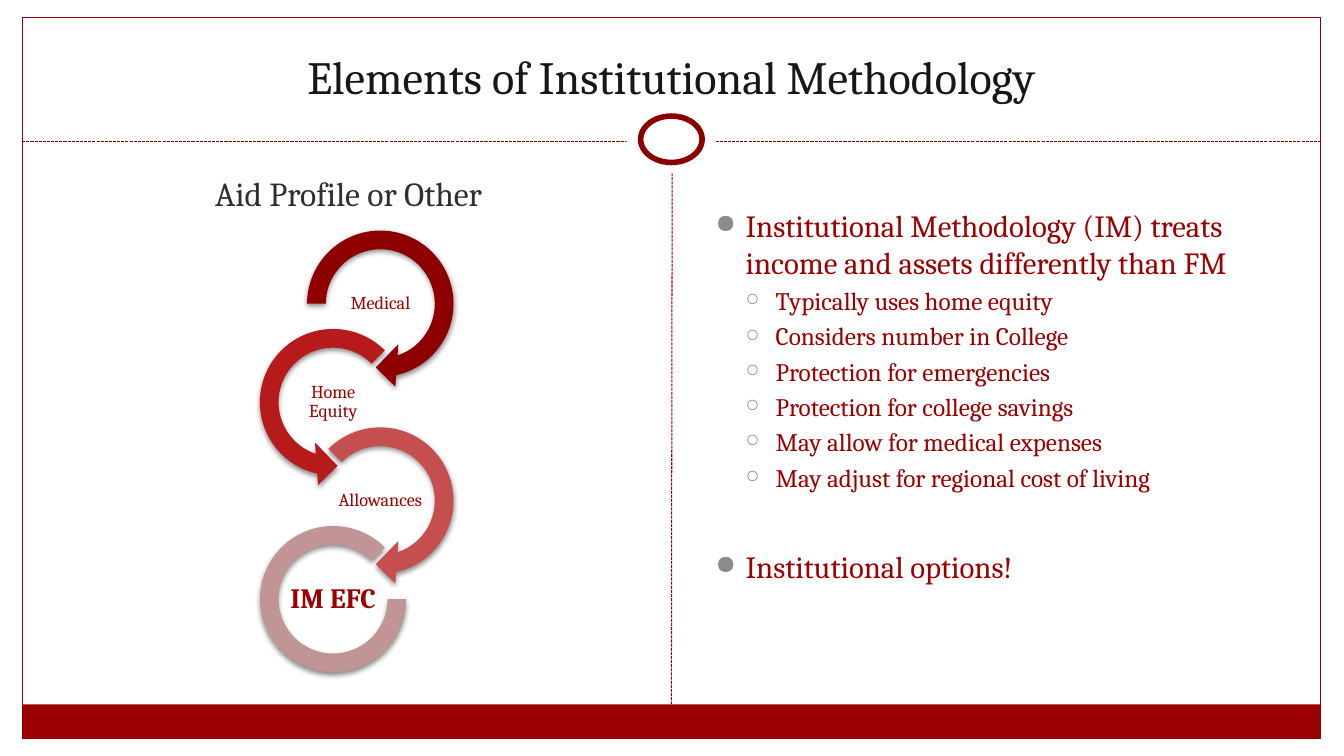
from dataclasses import dataclass

from lxml import etree
from pptx import Presentation
from pptx import util as u
from pptx.dml.color import RGBColor
from pptx.enum import dml, shapes, text
from pptx.oxml import parse_xml
from pptx.oxml.ns import nsdecls, qn


@dataclass(frozen=True)
class Theme:
    font: str = "Cambria"
    white: str = "FFFFFF"
    red: str = "9C0000"
    border: str = "8A0000"
    title: str = "171717"
    heading: str = "2F2F2F"
    bullets: tuple = ("8B8B8B", "8F8F8F")
    loops: tuple = ("8E0000", "B71A1A", "C54E4E", "C19595")
    title_size: int = 33
    heading_size: int = 24
    body_sizes: tuple = (22, 18)
    label_size: int = 13
    result_size: int = 20


THEME = Theme()
SHAPE = shapes.MSO_SHAPE
CENTER = text.PP_ALIGN.CENTER
MIDDLE = text.MSO_ANCHOR.MIDDLE
# Loop label, preset shape and shape adjustments, from top to bottom
LOOPS = [
    ("Medical", SHAPE.CIRCULAR_ARROW, (0.11, 11.42, 45, 108, 0.125)),
    ("Home Equity", SHAPE.LEFT_CIRCULAR_ARROW, (0.11, 11.42, 63, 189, 0.125)),
    ("Allowances", SHAPE.CIRCULAR_ARROW, (0.11, 11.42, 45, 135, 0.125)),
    ("IM EFC", SHAPE.BLOCK_ARC, (0, 189, 0.127)),
]
# Level, wording and space before in points
POINTS = [
    (0, "Institutional Methodology (IM) treats income and assets differently than FM", 0),
    (1, "Typically uses home equity", 3.6),
    (1, "Considers number in College", 3.6),
    (1, "Protection for emergencies", 3.6),
    (1, "Protection for college savings", 3.6),
    (1, "May allow for medical expenses", 3.6),
    (1, "May adjust for regional cost of living", 3.6),
    (0, "Institutional options!", 39.6),
]


def rgb(color):
    return RGBColor.from_string(color)


def cm_box(*lengths):
    return [u.Cm(length) for length in lengths]


def add_outline(parent, preset, box, fill=None, line=None, width=0.75):
    outline = parent.add_shape(preset, *cm_box(*box))
    outline.shadow.inherit = False
    if fill:
        outline.fill.solid()
        outline.fill.fore_color.rgb = rgb(fill)
    else:
        outline.fill.background()
    if line:
        outline.line.color.rgb = rgb(line)
        outline.line.width = u.Pt(width)
    else:
        outline.line.fill.background()
    return outline


def add_dashed(parent, start, end, color):
    rule = parent.add_connector(shapes.MSO_CONNECTOR.STRAIGHT, *cm_box(*start, *end))
    rule.line.color.rgb = rgb(color)
    rule.line.width = u.Pt(0.75)
    rule.line.dash_style = dml.MSO_LINE.SQUARE_DOT
    properties = rule._element.spPr
    etree.SubElement(properties, qn("a:effectLst"))
    return rule


def style_runs(paragraph, size, color, bold=False):
    for run in paragraph.runs:
        run.font.name = THEME.font
        run.font.size = u.Pt(size)
        run.font.bold = bold
        run.font.color.rgb = rgb(color)


def add_caption(parent, box, wording, size, color, anchor, bold=False):
    caption = parent.add_textbox(*cm_box(*box))
    frame = caption.text_frame
    frame.word_wrap = True
    frame.vertical_anchor = anchor
    frame.text = wording
    frame.paragraphs[0].alignment = CENTER
    style_runs(frame.paragraphs[0], size, color, bold)
    return frame


def add_bullet(paragraph, level):
    properties = paragraph._p.get_or_add_pPr()
    properties.set("marL", str(u.Cm(0.76 * (level + 1))))
    properties.set("indent", str(-u.Cm(0.76)))
    size, mark = ((85, "●"), (70, "○"))[level]
    for element in (
        f'<a:buClr {nsdecls("a")}><a:srgbClr val="{THEME.bullets[level]}"/></a:buClr>',
        f'<a:buSzPct {nsdecls("a")} val="{size * 1000}"/>',
        f'<a:buChar {nsdecls("a")} char="{mark}"/>',
    ):
        properties.append(parse_xml(element))


def add_soft_shadow(loop):
    effects = loop._element.spPr.find(qn("a:effectLst"))
    effects.append(parse_xml(
        f'<a:outerShdw {nsdecls("a")} blurRad="{u.Pt(4)}" dist="{u.Pt(2)}" '
        'dir="5400000" rotWithShape="0"><a:srgbClr val="000000">'
        '<a:alpha val="45000"/></a:srgbClr></a:outerShdw>'))


def build_frame(parent, box):
    left, top, width, height = box
    middle, bottom, divider = left + width / 2, top + height, top + 3.13
    bar_height = 0.87

    # Footer bar, border and title divider
    footer = add_outline(parent, SHAPE.RECTANGLE,
                         (left, bottom - bar_height, width, bar_height), THEME.red)
    add_outline(parent, SHAPE.RECTANGLE, box, line=THEME.border)
    add_dashed(parent, (left, divider), (left + width, divider), THEME.border)

    # Ring on the divider, with a white gap around it
    for ring_width, ring_height, line in ((2.26, 1.7, None), (1.55, 1.17, THEME.border)):
        ring_box = (middle - ring_width / 2, divider - 0.05 - ring_height / 2,
                    ring_width, ring_height)
        add_outline(parent, SHAPE.OVAL, ring_box, THEME.white, line, 4)

    # Column divider
    columns = add_dashed(parent, (middle, bottom - bar_height),
                         (middle + 0.02, divider + 0.81), THEME.red)
    columns.begin_connect(footer, 0)


def build_loops(parent, box):
    left, top, width, height = box
    loop_size, arc_size = 4.29, 3.68
    label_width, label_height = 2.39, 1.19
    shift = width - loop_size
    step = (height - loop_size) / (len(LOOPS) - 1)
    chain = parent.add_group_shape().shapes

    for row, (label, preset, adjustments) in enumerate(LOOPS):
        is_result = row == len(LOOPS) - 1
        size = arc_size if is_result else loop_size
        center_x = left + loop_size / 2 + (shift if row % 2 == 0 else 0)
        center_y = top + loop_size / 2 + row * step
        loop = add_outline(chain, preset,
                           (center_x - size / 2, center_y - size / 2, size, size),
                           THEME.loops[row])
        for index, value in enumerate(adjustments):
            loop.adjustments[index] = value
        add_soft_shadow(loop)

        label_box = (center_x - label_width / 2, center_y - label_height / 2,
                     label_width, label_height)
        label_size = THEME.result_size if is_result else THEME.label_size
        frame = add_caption(chain, label_box, label, label_size, THEME.red, MIDDLE, is_result)
        frame.paragraphs[0].line_spacing = 0.9
        frame.margin_left = frame.margin_right = u.Cm(0.03)
        frame.margin_top = frame.margin_bottom = u.Cm(0.03)


def build_points(parent, box):
    frame = parent.add_textbox(*cm_box(*box)).text_frame
    frame.word_wrap = True
    for index, (level, wording, gap) in enumerate(POINTS):
        point = frame.paragraphs[0] if index == 0 else frame.add_paragraph()
        point.text = wording
        point.level = level
        add_bullet(point, level)
        point.space_before = u.Pt(gap)
        style_runs(point, THEME.body_sizes[level], THEME.red)


def main():
    deck = Presentation()
    deck.slide_width, deck.slide_height = cm_box(33.87, 19.05)
    parts = deck.slides.add_slide(deck.slide_layouts[6]).shapes

    build_frame(parts, (0.56, 0.43, 32.72, 18.19))
    add_caption(parts, (1.12, 0.64, 31.6, 2.1), "Elements of Institutional Methodology",
                THEME.title_size, THEME.title, text.MSO_ANCHOR.BOTTOM)
    build_loops(parts, (6.25, 5.51, 5.48, 11.73))
    build_points(parts, (17.78, 5.08, 14.96, 11.73))
    add_caption(parts, (2.97, 4.24, 11.63, 1.27), "Aid Profile or Other",
                THEME.heading_size, THEME.heading, text.MSO_ANCHOR.TOP)
    deck.save("out.pptx")


if __name__ == "__main__":
    main()
